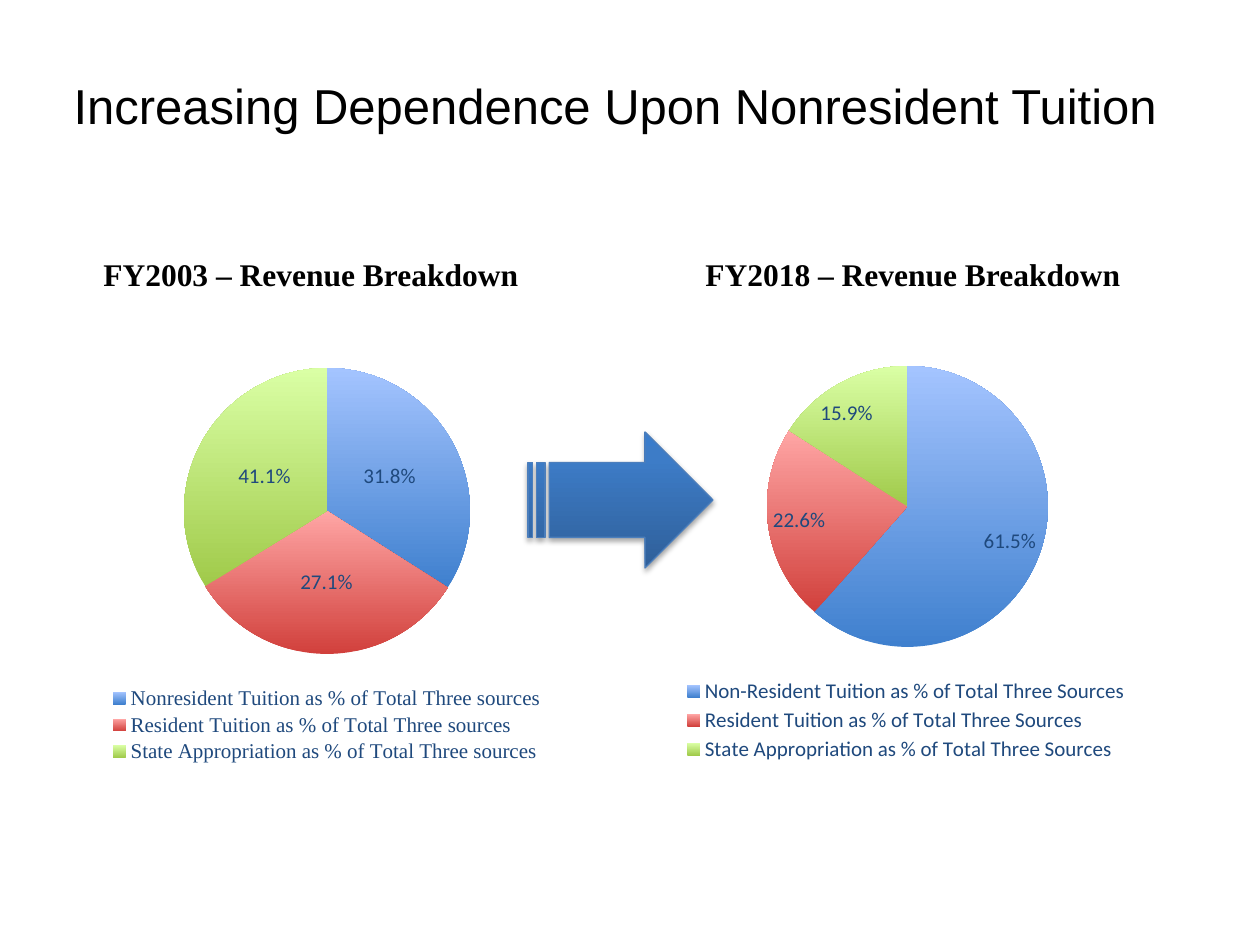
import copy

import pptx
import pptx.chart.data
import pptx.dml.color
import pptx.enum.chart
import pptx.enum.shapes
import pptx.enum.text
import pptx.oxml
import pptx.oxml.ns
import pptx.util

EMU_PER_PX = 914400 / 126
NAVY = "1F497D"
SLICE_STOPS = [
    [(0, "3F80CE"), (1, "A4C4FF")],
    [(0, "D1403C"), (1, "FFA6A5")],
    [(0, "A0CA4A"), (1, "DAFFA5")],
]


def px(length):
    return pptx.util.Emu(round(length * EMU_PER_PX))


def rgb(value):
    return pptx.dml.color.RGBColor.from_string(value)


def set_font(font, name, size, color, bold=False):
    font.name = name
    font.size = pptx.util.Pt(size)
    font.color.rgb = rgb(color)
    font.bold = bold


def set_gradient(fill, stops):
    fill.gradient()
    fill.gradient_angle = 90
    for stop, (position, color) in zip(fill.gradient_stops, stops):
        stop.position = position
        stop.color.rgb = rgb(color)


def set_layout(parent, index, frame, area, inner=False):
    for old in parent.xpath("./c:layout"):
        parent.remove(old)
    left, top, width, height = frame
    parts = {
        "x": (area[0] - left) / width,
        "y": (area[1] - top) / height,
        "w": area[2] / width,
        "h": area[3] / height,
    }
    target = '<c:layoutTarget val="inner"/>' if inner else ""
    modes = '<c:xMode val="edge"/><c:yMode val="edge"/>'
    values = "".join(f'<c:{key} val="{value:.4f}"/>' for key, value in parts.items())
    parent.insert(index, pptx.oxml.parse_xml(
        f'<c:layout {pptx.oxml.ns.nsdecls("c")}><c:manualLayout>'
        f"{target}{modes}{values}</c:manualLayout></c:layout>"
    ))


class RevenueSlide:
    def __init__(self, deck):
        self.page = deck.slides.add_slide(deck.slide_layouts[5])

    def title(self, text, frame):
        box = self.page.shapes.title
        box.left, box.top, box.width, box.height = map(px, frame)
        box.fill.solid()
        box.fill.fore_color.rgb = rgb("FFFFFF")
        box.text_frame.text = text
        para = box.text_frame.paragraphs[0]
        para.alignment = pptx.enum.text.PP_ALIGN.CENTER
        set_font(para.font, "Arial", 28, "000000")

    def heading(self, text, frame):
        box = self.page.shapes.add_textbox(*map(px, frame))
        box.text_frame.word_wrap = True
        box.text_frame.text = text
        set_font(box.text_frame.paragraphs[0].font, "Times New Roman", 18, "000000", True)

    def pie(self, frame, pie_area, legend_area, categories, values,
            legend_font, label_position, label_texts=()):
        data = pptx.chart.data.CategoryChartData()
        data.categories = categories
        data.add_series("Series 1", values)
        chart = self.page.shapes.add_chart(
            pptx.enum.chart.XL_CHART_TYPE.PIE, *map(px, frame), data
        ).chart
        set_font(chart.font, "Calibri", 10, "000000")
        chart.has_title = False
        chart.has_legend = True
        legend = chart.legend
        legend.position = pptx.enum.chart.XL_LEGEND_POSITION.BOTTOM
        legend.include_in_layout = False
        set_font(legend.font, legend_font, 12, NAVY)
        plot = chart.plots[0]
        plot.vary_by_categories = True
        series = plot.series[0]
        labels = series.data_labels
        labels.show_percentage = True
        labels.show_value = False
        labels.number_format = "0.0%"
        labels.number_format_is_linked = False
        labels.position = label_position
        set_font(labels.font, "Calibri", 12, NAVY)
        for index, stops in enumerate(SLICE_STOPS):
            point = series.points[index]
            set_gradient(point.format.fill, stops)
            point.format.line.fill.background()
        for index, text in enumerate(label_texts):
            label = series.points[index].data_label
            label.text_frame.text = text
            label.position = label_position
            set_font(label.text_frame.paragraphs[0].font, "Calibri", 12, NAVY)
        space = chart.element if hasattr(chart, "element") else chart._chartSpace
        set_layout(space.xpath(".//c:plotArea")[0], 0, frame, pie_area, inner=True)
        set_layout(space.xpath(".//c:legend")[0], 1, frame, legend_area)

    def arrow(self, frame, stops):
        shape = self.page.shapes.add_shape(
            pptx.enum.shapes.MSO_SHAPE.STRIPED_RIGHT_ARROW, *map(px, frame)
        )
        shape.adjustments[0] = 0.55
        shape.adjustments[1] = 0.5
        shape.fill.gradient()
        properties = shape.element.spPr
        stop_list = properties.xpath("./a:gradFill/a:gsLst")[0]
        stop_list.append(copy.deepcopy(stop_list[-1]))
        set_gradient(shape.fill, stops)
        shape.line.color.rgb = rgb("4B7EBC")
        shape.line.width = pptx.util.Pt(0.75)
        shape.shadow.inherit = False
        properties.xpath("./a:effectLst")[0].append(pptx.oxml.parse_xml(
            f'<a:outerShdw {pptx.oxml.ns.nsdecls("a")} blurRad="40000" dist="23000" '
            'dir="5400000" rotWithShape="0"><a:srgbClr val="000000">'
            '<a:alpha val="35000"/></a:srgbClr></a:outerShdw>'
        ))


def main():
    deck = pptx.Presentation()
    deck.slide_width, deck.slide_height = px(1260), px(945)
    slide = RevenueSlide(deck)
    positions = pptx.enum.chart.XL_LABEL_POSITION
    slide.title("Increasing Dependence Upon Nonresident Tuition", (31, 69, 1168, 72))
    slide.pie(
        (649, 325, 513, 442), (767, 366, 281, 281), (681, 675, 450, 91),
        [
            "Non-Resident Tuition as % of Total Three Sources",
            "Resident Tuition as % of Total Three Sources",
            "State Appropriation as % of Total Three Sources",
        ],
        (61.5, 22.6, 15.9), "Calibri", positions.BEST_FIT,
    )
    slide.pie(
        (68, 351, 517, 417), (184, 368, 286, 286), (107, 683, 440, 84),
        [
            "Nonresident Tuition as % of Total Three sources",
            "Resident Tuition as % of Total Three sources",
            "State Appropriation as % of Total Three sources",
        ],
        (34, 32.2, 33.8), "Times New Roman", positions.CENTER,
        ("31.8%", "27.1%", "41.1%"),
    )
    for year, left in ((2003, 91), (2018, 693)):
        slide.heading(f"FY{year} – Revenue Breakdown", (left, 249, 462, 102))
    slide.arrow((528, 432, 185, 136), [(0, "2F5F99"), (0.8, "3D7CC7"), (1, "3A7CCB")])
    deck.save("out.pptx")


if __name__ == "__main__":
    main()
